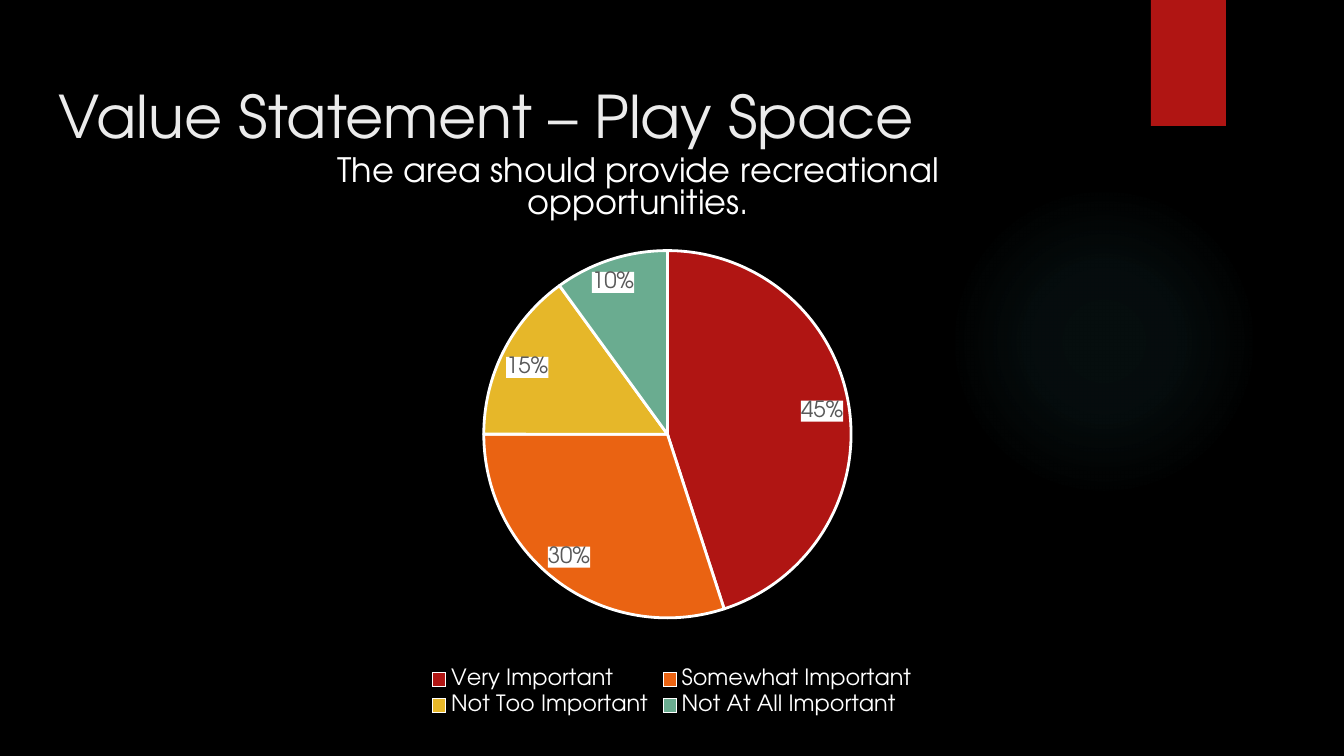
"""Build the Play Space value statement slide with its pie chart."""
from lxml import etree
from pptx import Presentation
from pptx.chart.data import CategoryChartData
from pptx.dml.color import RGBColor
from pptx.enum.chart import XL_CHART_TYPE as CT, XL_LABEL_POSITION as LP, XL_LEGEND_POSITION as LG
from pptx.enum.shapes import MSO_SHAPE as SHAPE
from pptx.enum.text import MSO_ANCHOR as ANCHOR
from pptx.oxml import parse_xml
from pptx.oxml.ns import nsdecls, qn
from pptx.util import Pt

FONT = "TeX Gyre Adventor"


def rgb(color):
    return RGBColor.from_string(color)


def style(font, size, color):
    font.name, font.size, font.bold = FONT, Pt(size), False
    font.color.rgb = rgb(color)


prs = Presentation()
prs.slide_width, prs.slide_height = Pt(720), Pt(405)
s = prs.slides.add_slide(prs.slide_layouts[6])
s.background.fill.solid()
s.background.fill.fore_color.rgb = rgb("000000")

glow = s.shapes.add_shape(SHAPE.OVAL, Pt(508.3), Pt(99.4), Pt(166.3), Pt(166.3))
glow.shadow.inherit = False
glow.line.fill.background()
stops = "".join(
    f'<a:gs pos="{pos}000"><a:srgbClr val="50B9C1"><a:alpha val="{alpha}000"/></a:srgbClr></a:gs>'
    for pos, alpha in [(0, 7), (36, 6), (69, 0)])
glow.element.spPr.find(qn("a:prstGeom")).addnext(parse_xml(
    f'<a:gradFill {nsdecls("a")}><a:gsLst>{stops}</a:gsLst><a:path path="circle">'
    '<a:fillToRect l="50000" t="50000" r="50000" b="50000"/></a:path></a:gradFill>'))

tab = s.shapes.add_shape(SHAPE.RECTANGLE, Pt(616.5), Pt(0), Pt(40.3), Pt(67.5))
tab.shadow.inherit = False
tab.fill.solid()
tab.fill.fore_color.rgb = rgb("B01513")
tab.line.fill.background()

title = s.shapes.add_textbox(Pt(24.5), Pt(35.3), Pt(671), Pt(45.4))
tf = title.text_frame
tf.word_wrap = True
tf.vertical_anchor = ANCHOR.TOP
tf.margin_left = tf.margin_right = tf.margin_top = tf.margin_bottom = Pt(7.2)
tf.text = "Value Statement – Play Space"
style(tf.paragraphs[0].runs[0].font, 31.5, "EBEBEB")

data = CategoryChartData()
data.categories = ["Very Important", "Somewhat Important", "Not Too Important", "Not At All Important"]
data.add_series("Series 1", [45, 30, 15, 10])
chart = s.shapes.add_chart(CT.PIE, Pt(120), Pt(62.6), Pt(480), Pt(324), data).chart
style(chart.font, 10, "FFFFFF")

chart.has_title = True
tf = chart.chart_title.text_frame
tf.text = "The area should provide recreational opportunities."
style(tf.paragraphs[0].runs[0].font, 18, "FFFFFF")

chart.has_legend = True
chart.legend.position = LG.BOTTOM
chart.legend.include_in_layout = False
style(chart.legend.font, 12, "FFFFFF")

plot = chart.plots[0]
plot.vary_by_categories = True
for i, color in enumerate(["B01513", "EA6312", "E6B729", "6AAC90"]):
    p = plot.series[0].points[i].format
    p.fill.solid()
    p.fill.fore_color.rgb = rgb(color)
    p.line.color.rgb = rgb("FFFFFF")
    p.line.width = Pt(1.5)

labels = plot.series[0].data_labels
labels.show_percentage, labels.show_value = True, False
labels.number_format, labels.number_format_is_linked = "0%", False
labels.position = LP.BEST_FIT
style(labels.font, 12, "595959")
labels._element.find(qn("c:txPr")).addprevious(parse_xml(
    f'<c:spPr {nsdecls("c", "a")}><a:solidFill><a:srgbClr val="FFFFFF"/></a:solidFill></c:spPr>'))

title_el = chart.chart_title._element
area = chart._chartSpace.chart.plotArea
for parent, places in [(title_el, {"x": 0.12, "y": 0.05}),
                       (area, {"x": 0.29, "y": 0.22, "w": 0.41, "h": 0.61})]:
    for old in parent.findall(qn("c:layout")):
        parent.remove(old)
    layout = etree.Element(qn("c:layout"))
    manual = etree.SubElement(layout, qn("c:manualLayout"))
    if parent is area:
        etree.SubElement(manual, qn("c:layoutTarget")).set("val", "inner")
    for key in ("x", "y"):
        etree.SubElement(manual, qn(f"c:{key}Mode")).set("val", "edge")
    for key, value in places.items():
        etree.SubElement(manual, qn(f"c:{key}")).set("val", str(value))
    parent.insert(0 if parent is area else 1, layout)

prs.save("out.pptx")
